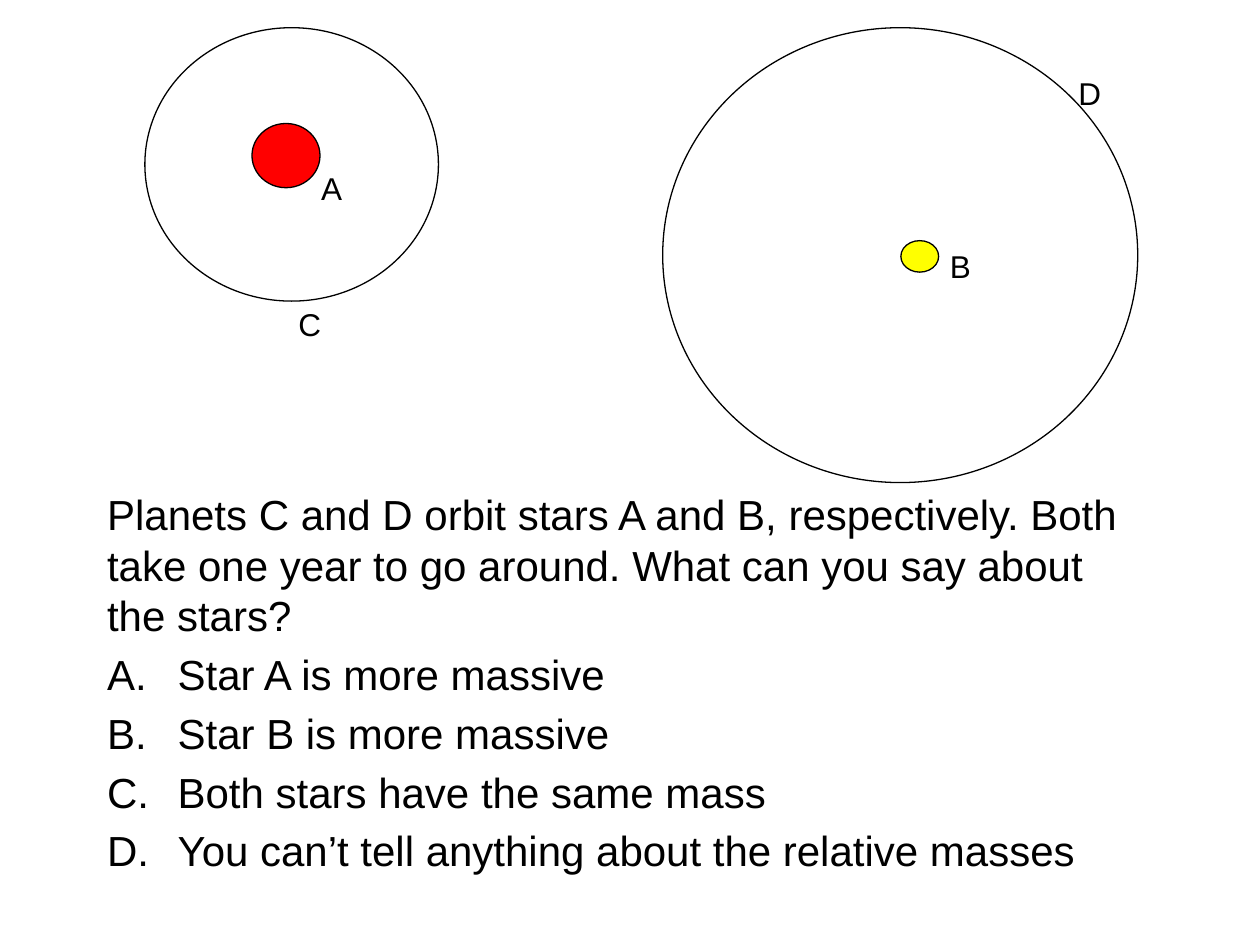
from lxml.etree import SubElement
from pptx import Presentation
from pptx.dml.color import RGBColor
from pptx.enum.shapes import MSO_SHAPE
from pptx.enum.text import MSO_ANCHOR, MSO_AUTO_SIZE, PP_ALIGN
from pptx.oxml.ns import qn
from pptx.util import Inches, Pt

COLORS = {"ink": "000000", "red": "FF0000", "yellow": "FFFF00"}
FONT = "Arial"
QUERY = ("Planets C and D orbit stars A and B, respectively. Both take one "
         "year to go around. What can you say about the stars?")
CHOICES = [
    "Star A is more massive",
    "Star B is more massive",
    "Both stars have the same mass",
    "You can’t tell anything about the relative masses",
]
INDENT = Inches(0.56)

# Fill (None for an orbit), then left, top, width, height
DISCS = [
    ("red", 2, 0.98, 0.54, 0.51),
    (None, 1.15, 0.22, 2.33, 2.17),
    ("yellow", 7.15, 1.91, 0.3, 0.25),
    (None, 5.26, 0.22, 3.77, 3.61),
]
# Text, left, top, width
LABELS = [
    ("A", 2.45, 1.29, 0.38),
    ("B", 7.44, 1.91, 0.44),
    ("C", 2.27, 2.37, 0.38),
    ("D", 8.46, 0.54, 0.38),
]


def color(name):
    return RGBColor.from_string(COLORS[name])


def style(para, size):
    para.font.name = FONT
    para.font.size = Pt(size)
    para.font.color.rgb = color("ink")
    para.alignment = PP_ALIGN.LEFT


def add_disc(slide, fill, *box):
    disc = slide.shapes.add_shape(MSO_SHAPE.OVAL, *map(Inches, box))
    disc.shadow.inherit = False
    disc.line.color.rgb = color("ink")
    disc.line.width = Pt(0.75)
    if fill:
        disc.fill.solid()
        disc.fill.fore_color.rgb = color(fill)
    else:
        disc.fill.background()


def add_label(slide, text, left, top, width):
    box = slide.shapes.add_textbox(
        Inches(left), Inches(top), Inches(width), Inches(0.4))
    box.text_frame.word_wrap = True
    para = box.text_frame.paragraphs[0]
    para.text = text
    style(para, 18)


def set_bullet(para, lettered):
    props = para._p.get_or_add_pPr()
    indent = INDENT if lettered else 0
    props.set("marL", str(indent))
    props.set("indent", str(-indent))
    if lettered:
        SubElement(props, qn("a:buFont"), typeface="+mj-lt")
        SubElement(props, qn("a:buAutoNum"), type="alphaUcPeriod")
    else:
        SubElement(props, qn("a:buNone"))


def fill_body(body):
    body.left, body.top = Inches(0.75), Inches(3.83)
    body.width, body.height = Inches(8.5), Inches(4.5)
    frame = body.text_frame
    frame.auto_size = MSO_AUTO_SIZE.NONE
    frame.vertical_anchor = MSO_ANCHOR.TOP
    frame.text = "\n".join([QUERY, *CHOICES])
    for i, para in enumerate(frame.paragraphs):
        style(para, 24)
        para.space_before = Pt(4.8)
        set_bullet(para, i > 0)


def main():
    deck = Presentation()
    deck.slide_width, deck.slide_height = Inches(10), Inches(7.5)
    # Title and content layout, with the unused title removed
    slide = deck.slides.add_slide(deck.slide_layouts[1])
    title = slide.shapes.title.element
    title.getparent().remove(title)

    # Question and choices
    fill_body(slide.placeholders[1])

    # Stars and orbits
    for disc in DISCS:
        add_disc(slide, *disc)
    for label in LABELS:
        add_label(slide, *label)

    deck.save("out.pptx")


if __name__ == "__main__":
    main()
